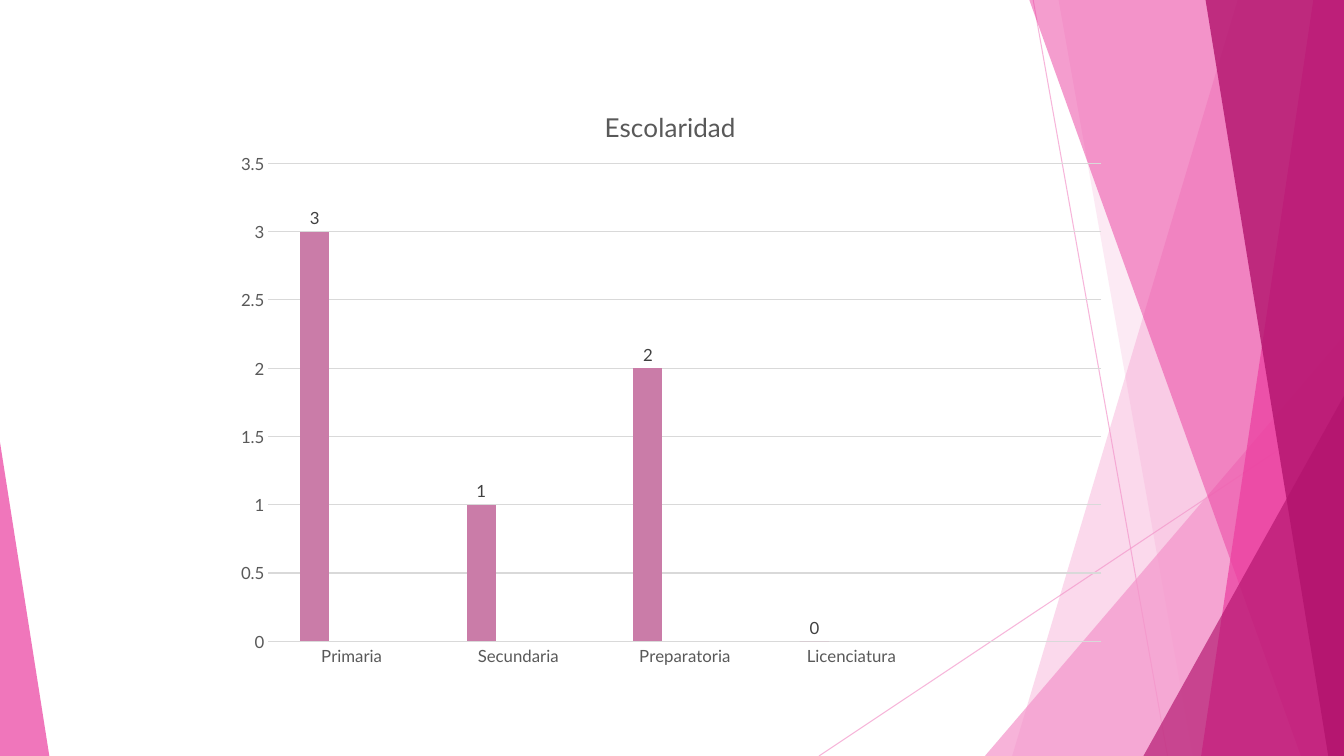
from lxml import etree
from pptx import Presentation
from pptx import util as u
from pptx.chart.data import CategoryChartData
from pptx.dml.color import RGBColor
from pptx.enum import chart as charts, shapes
from pptx.oxml import ns, parse_xml

PX = 9525
WIDTH, HEIGHT = 1280, 720


def colour(value):
    return RGBColor.from_string(value)


class Page:
    font = "Lato"
    pale, pink, dark = "F496CB", "EB3D9F", "B2136D"
    axis_text, label_text, grid = "595959", "404040", "D9D9D9"

    def __init__(self, deck):
        self.slide = deck.slides.add_slide(deck.slide_layouts[6])
        self.shapes = self.slide.shapes

    def fade(self, format_fill, opacity):
        hue = format_fill._xPr.find(".//" + ns.qn("a:srgbClr"))
        etree.SubElement(hue, ns.qn("a:alpha"), val=str(opacity * 1000))

    def paint(self, shape, fill, opacity):
        shape.shadow.inherit = False
        shape.fill.solid()
        shape.fill.fore_color.rgb = colour(fill)
        self.fade(shape.fill, opacity)
        shape.line.fill.background()

    def line(self, start, end):
        ends = [u.Emu(value * PX) for value in (*start, *end)]
        line = self.shapes.add_connector(shapes.MSO_CONNECTOR.STRAIGHT, *ends)
        line.line.color.rgb = colour(self.pale)
        line.line.width = u.Pt(0.75)
        self.fade(line.line.fill, 70)
        etree.SubElement(line._element.spPr, ns.qn("a:effectLst"))

    def band(self, top_x, bottom_x, fill, opacity):
        outline = self.shapes.build_freeform(top_x, -1, scale=PX)
        outline.add_line_segments([(WIDTH, -1), (WIDTH, HEIGHT), (bottom_x, HEIGHT)])
        self.paint(outline.convert_to_shape(), fill, opacity)

    def triangle(self, left, width, height, apex, fill, opacity):
        frame = [u.Emu(value * PX) for value in (left, HEIGHT - height, width, height)]
        shape = self.shapes.add_shape(shapes.MSO_SHAPE.ISOSCELES_TRIANGLE, *frame)
        shape.adjustments[0] = apex
        self.paint(shape, fill, opacity)

    def style(self, font, size, hue):
        font.name = self.font
        font.size = u.Pt(size)
        font.bold = False
        font.color.rgb = colour(hue)

    def layout(self, **values):
        modes = [("xMode", "edge"), ("yMode", "edge")]
        if "w" in values:
            modes.insert(0, ("layoutTarget", "inner"))
        parts = "".join(f'<c:{name} val="{value}"/>' for name, value in modes + list(values.items()))
        return parse_xml(
            f'<c:layout {ns.nsdecls("c")}><c:manualLayout>{parts}</c:manualLayout></c:layout>'
        )

    def place(self, parent, layout):
        for old in parent.findall(ns.qn("c:layout")):
            parent.remove(old)
        rich = parent.find(ns.qn("c:tx"))
        parent.insert(0 if rich is None else 1, layout)

    def column_chart(self, frame, title, categories, series):
        data = CategoryChartData()
        data.categories = categories
        for name, values, hue in series:
            data.add_series(name, values)
        chart = self.shapes.add_chart(
            charts.XL_CHART_TYPE.COLUMN_CLUSTERED, *[u.Emu(value * PX) for value in frame], data
        ).chart
        self.style(chart.font, 10, "000000")
        chart.has_legend = False

        chart.has_title = True
        para = chart.chart_title.text_frame.paragraphs[0]
        para.text = title
        self.style(para.font, 18.6, self.axis_text)
        chart.chart_title.include_in_layout = False
        self.place(chart.chart_title._element, self.layout(x=0.42, y=0.04))

        for axis in (chart.category_axis, chart.value_axis):
            axis.major_tick_mark = axis.minor_tick_mark = charts.XL_TICK_MARK.NONE
            self.style(axis.tick_labels.font, 12, self.axis_text)
        values_axis = chart.value_axis
        values_axis.minimum_scale, values_axis.maximum_scale = 0, 3.5
        values_axis.major_unit = 0.5
        values_axis.format.line.fill.background()
        for rule in (chart.category_axis.format.line, values_axis.major_gridlines.format.line):
            rule.color.rgb = colour(self.grid)
            rule.width = u.Pt(0.75)

        plot = chart.plots[0]
        plot.gap_width, plot.overlap = 219, -27
        plot.vary_by_categories = False
        for columns, (name, values, hue) in zip(plot.series, series):
            columns.format.fill.solid()
            columns.format.fill.fore_color.rgb = colour(hue)
            columns.invert_if_negative = False
            labels = columns.data_labels
            labels.show_value = True
            labels.position = charts.XL_LABEL_POSITION.OUTSIDE_END
            self.style(labels.font, 12, self.label_text)
        plot_area = plot._element.getparent()
        self.place(plot_area, self.layout(x=0.05, y=0.14, w=0.93, h=0.8))


def main():
    deck = Presentation()
    deck.slide_width, deck.slide_height = u.Emu(WIDTH * PX), u.Emu(HEIGHT * PX)
    page = Page(deck)

    page.line((984, 0), (1112, HEIGHT))
    page.line((WIDTH, 387), (780, HEIGHT))
    page.band(1179, 964, page.pale, 36)
    page.band(1008, 1136, page.pale, 20)
    page.triangle(938, 342, 400, 1, page.pale, 72)
    page.band(980, 1239, page.pink, 50)
    page.band(1251, 1144, page.pink, 70)
    page.band(1148, 1265, page.dark, 80)
    page.triangle(1089, 191, 343, 1, page.dark, 66)
    page.triangle(0, 47, 299, 0, page.pink, 70)

    empty = [None] * 5
    page.column_chart(
        (213, 76, 853, 569),
        "Escolaridad",
        ["Primaria", "Secundaria", "Preparatoria", "Licenciatura", ""],
        [
            ("Series 1", [3, 1, 2, 0, None], "CA7CA8"),
            ("Series 2", empty, page.pale),
            ("Series 3", empty, "F8C3DF"),
        ],
    )
    deck.save("out.pptx")


if __name__ == "__main__":
    main()
